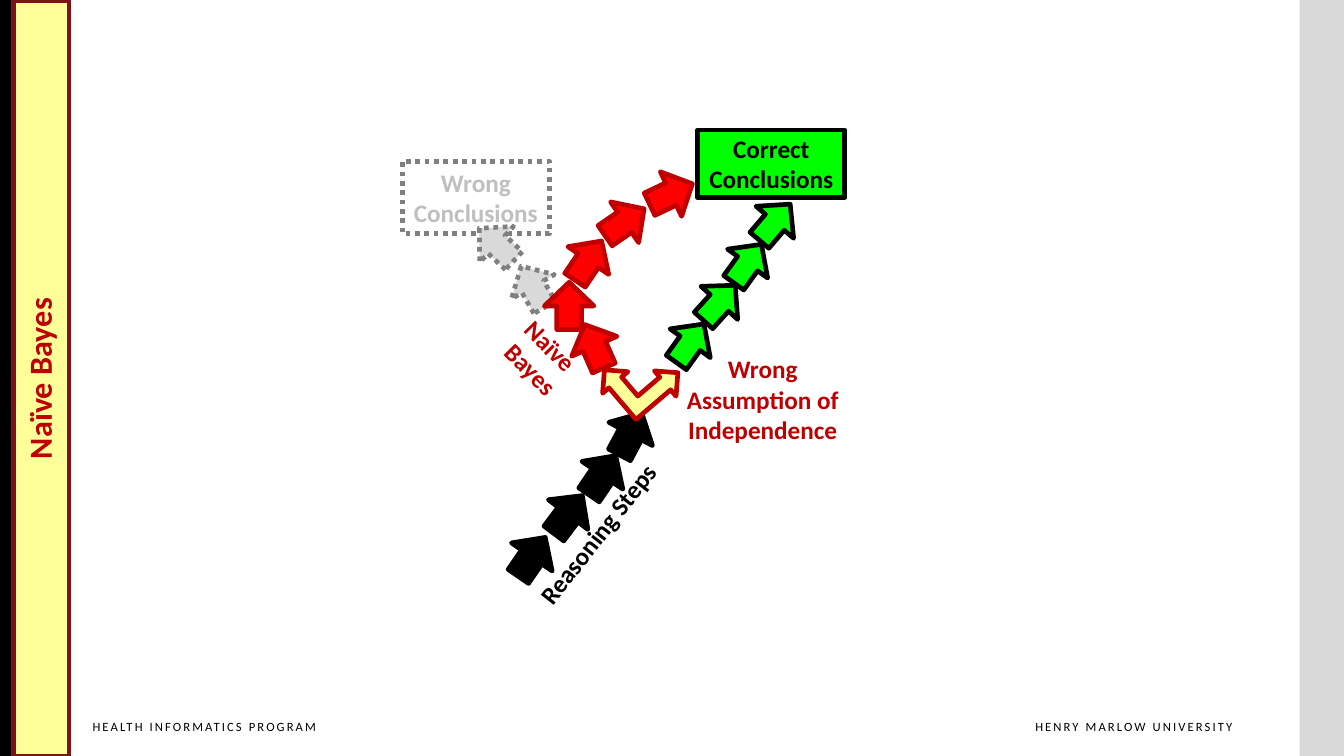
from pptx import Presentation
from pptx.dml.color import RGBColor
from pptx.enum import dml, shapes, text
from pptx.util import Inches, Pt

BLACK, GREEN, RED, DARK_RED = "000000", "00FF00", "FF0000", "C00000"
YELLOW, MAROON = "FFFF99", "7D1219"
GRAY, MID_GRAY, PALE_GRAY = "D9D9D9", "808080", "BFBFBF"
PREset = shapes.MSO_SHAPE
CENTER, LEFT, RIGHT = text.PP_ALIGN.CENTER, text.PP_ALIGN.LEFT, text.PP_ALIGN.RIGHT
OUTLINE = 3.35
ARROW_SIZE = (0.47, 0.49)

bands = [((12.89, 0, 0.44, 7.5), GRAY), ((0, 0, 0.11, 7.5), BLACK)]
footers = [
    ("HENRY MARLOW UNIVERSITY", (9.87, 7.08, 2.35, 0.33), RIGHT),
    ("HEALTH INFORMATICS PROGRAM", (0.82, 7.08, 2.54, 0.33), LEFT),
]
title = ("Naïve Bayes", (-3.34, 3.48, 7.5, 0.55))
labels = [
    ("Reasoning Steps", (4.43, 5.08, 2.99, 0.43), 308.1, BLACK),
    ("Wrong Assumption of Independence", (6.53, 3.33, 2.07, 1.26), 0, DARK_RED),
    ("Naïve \vBayes", (4.47, 3.34, 1.81, 0.43), 45.5, DARK_RED),
]
conclusions = [
    ("Correct Conclusions", (6.92, 1.29, 1.46, 0.67), GREEN, BLACK, BLACK, False),
    ("Wrong Conclusions", (3.99, 1.6, 1.46, 0.72), None, MID_GRAY, PALE_GRAY, True),
]
fork = (6.02, 3.45, 0.66, 0.7)
trails = [
    (BLACK, BLACK, False,
     [(5.04, 5.28, 304.6), (6.02, 4.06, 298.1), (5.74, 4.47, 304.2), (5.4, 4.86, 306.9)]),
    (GREEN, BLACK, False,
     [(6.61, 3.16, 305.6), (6.9, 2.76, 312.1), (7.18, 2.37, 305.8), (7.45, 1.96, 310.4)]),
    (GRAY, MID_GRAY, True, [(5.05, 2.6, 240.5), (4.69, 2.18, 223.2)]),
    (RED, DARK_RED, False,
     [(5.66, 3.19, 246.3), (5.6, 2.34, 304.2), (5.96, 1.96, 325.4),
      (6.42, 1.68, 334.5), (5.41, 2.79, 270)]),
]

deck = Presentation()
deck.slide_width, deck.slide_height = Inches(13.33), Inches(7.5)
slide = deck.slides.add_slide(deck.slide_layouts[6])


def paint(target, color):
    target.solid()
    target.fore_color.rgb = RGBColor.from_string(color)


def draw(preset, box, fill=None, line=None, turn=0, dotted=False):
    shape = slide.shapes.add_shape(preset, *map(Inches, box))
    shape.shadow.inherit = False
    shape.rotation = turn
    if fill:
        paint(shape.fill, fill)
    else:
        shape.fill.background()
    if line:
        paint(shape.line.fill, line)
        shape.line.width = Pt(OUTLINE)
        if dotted:
            shape.line.dash_style = dml.MSO_LINE.ROUND_DOT
    else:
        shape.line.fill.background()
    return shape


def write(shape, words, color, size=18, bold=True, align=CENTER, anchor=text.MSO_ANCHOR.MIDDLE):
    frame = shape.text_frame
    frame.word_wrap = True
    frame.vertical_anchor = anchor
    paragraph = frame.paragraphs[0]
    paragraph.text = words
    paragraph.alignment = align
    for run in paragraph.runs:
        run.font.name, run.font.size, run.font.bold = "Calibri", Pt(size), bold
        paint(run.font.fill, color)
    return paragraph


def add_label(words, box, color, turn=0, **style):
    label = slide.shapes.add_textbox(*map(Inches, box))
    label.rotation = turn
    return label, write(label, words, color, **style)


def add_trail(fill, line, dotted, steps):
    for left, top, turn in steps:
        draw(PREset.RIGHT_ARROW, (left, top, *ARROW_SIZE), fill, line, turn, dotted)


for box, color in bands:
    draw(PREset.RECTANGLE, box, color)

for words, box, align in footers:
    footer, line = add_label(words, box, BLACK, size=9, bold=False, align=align,
                             anchor=text.MSO_ANCHOR.TOP)
    footer.text_frame.margin_right = 0
    for run in line.runs:
        run.font._element.set("spc", "150")

words, box = title
sidebar = draw(PREset.RECTANGLE, box, YELLOW, MAROON, 270)
margins = sidebar.text_frame
margins.margin_left = margins.margin_right = Inches(0.18)
margins.margin_top = margins.margin_bottom = Inches(0.18)
write(sidebar, words, DARK_RED, size=23).line_spacing = 0.9

for words, box, fill, line, color, dotted in conclusions:
    write(draw(PREset.RECTANGLE, box, fill, line, dotted=dotted), words, color)

black_trail, *branches = trails
add_trail(*black_trail)
draw(PREset.LEFT_UP_ARROW, fork, YELLOW, DARK_RED, 49.5)
for branch in branches:
    add_trail(*branch)

for words, box, turn, color in labels:
    add_label(words, box, color, turn)

deck.save("out.pptx")
